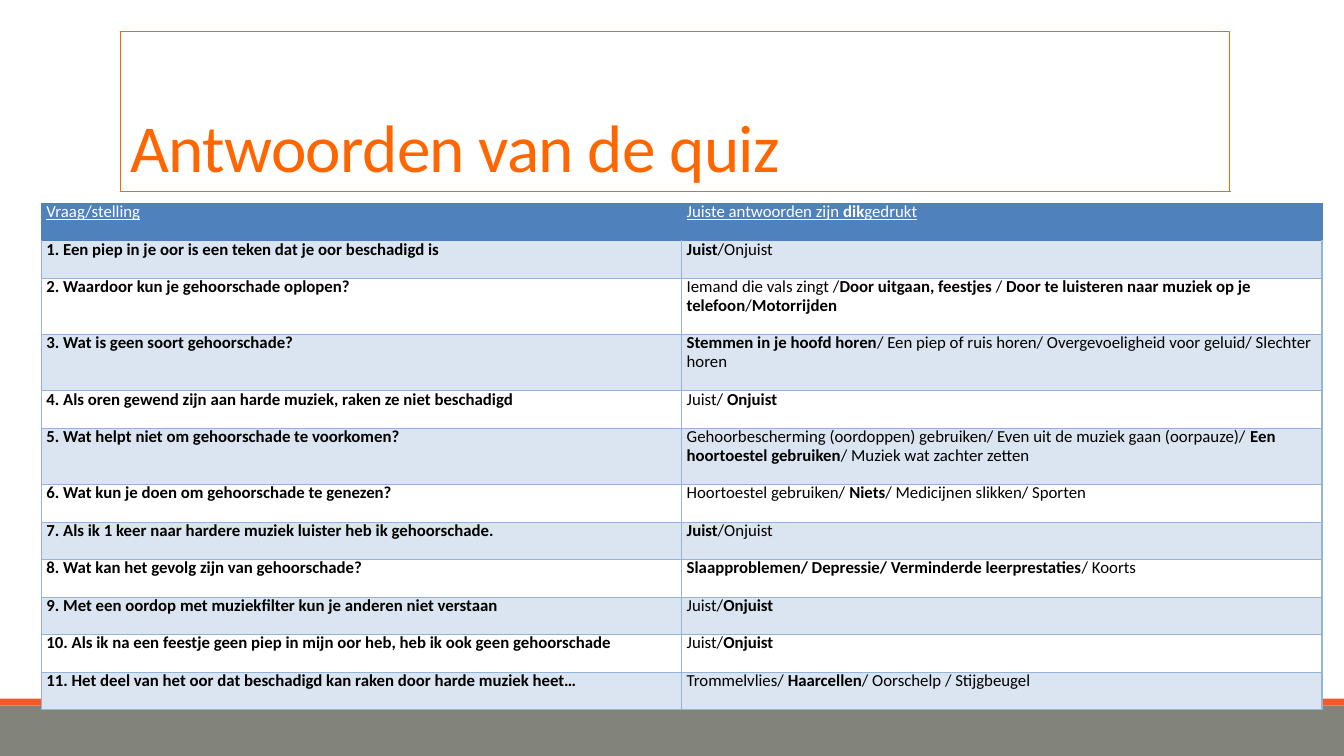
from lxml import etree
from pptx import Presentation
from pptx.dml.color import RGBColor
from pptx.enum.shapes import MSO_CONNECTOR, MSO_SHAPE
from pptx.enum.text import MSO_ANCHOR
from pptx.oxml.ns import qn
from pptx.util import Pt

RECTANGLE, STRAIGHT = MSO_SHAPE.RECTANGLE, MSO_CONNECTOR.STRAIGHT
BOTTOM, TOP = MSO_ANCHOR.BOTTOM, MSO_ANCHOR.TOP

# Content: text between ** marks is bold
TITLE = "Antwoorden van de quiz"
HEADER = ("Vraag/stelling", "Juiste antwoorden zijn **dik**gedrukt")
# Question, answers, number of lines the answers take
QUIZ = [
    ("1. Een piep in je oor is een teken dat je oor beschadigd is", "**Juist**/Onjuist", 1),
    ("2. Waardoor kun je gehoorschade oplopen?",
     "Iemand die vals zingt /**Door uitgaan, feestjes **/ "
     "**Door te luisteren naar muziek op je telefoon**/**Motorrijden**", 2),
    ("3. Wat is geen soort gehoorschade?",
     "**Stemmen in je hoofd horen**/ Een piep of ruis horen/ "
     "Overgevoeligheid voor geluid/ Slechter horen", 2),
    ("4. Als oren gewend zijn aan harde muziek, raken ze niet beschadigd",
     "Juist/ **Onjuist**", 1),
    ("5. Wat helpt niet om gehoorschade te voorkomen?",
     "Gehoorbescherming (oordoppen) gebruiken/ Even uit de muziek gaan (oorpauze)/ "
     "**Een hoortoestel gebruiken**/ Muziek wat zachter zetten", 2),
    ("6. Wat kun je doen om gehoorschade te genezen?",
     "Hoortoestel gebruiken/ **Niets**/ Medicijnen slikken/ Sporten", 1),
    ("7. Als ik 1 keer naar hardere muziek luister heb ik gehoorschade.",
     "**Juist**/Onjuist", 1),
    ("8. Wat kan het gevolg zijn van gehoorschade?",
     "**Slaapproblemen/ Depressie/ Verminderde leerprestaties**/ Koorts", 1),
    ("9. Met een oordop met muziekfilter kun je anderen niet verstaan",
     "Juist/**Onjuist**", 1),
    ("10. Als ik na een feestje geen piep in mijn oor heb, heb ik ook geen gehoorschade",
     "Juist/**Onjuist**", 1),
    ("11. Het deel van het oor dat beschadigd kan raken door harde muziek heet…",
     "Trommelvlies/ **Haarcellen**/ Oorschelp / Stijgbeugel", 1),
]

# Colours and measures in points
ORANGE, HEADER_BLUE, BAND_BLUE, GRID_BLUE = "FF6600", "4F81BD", "DBE5F1", "95B3D7"
SLIDE_W, SLIDE_H = 960, 540
FOOTER_TOP, STRIPE_H = 504, 5
TABLE_LEFT, TABLE_TOP, COLUMN_W = 29.5, 145.2, 457.4
LINE_H = 13.4


def colour(hex_code):
    return RGBColor.from_string(hex_code)


def write(frame, text, *, size, color, spacing, underline=None, tracking=None,
          anchor=TOP, margins=(7.2, 3.6)):
    """Fill a text frame or cell's frame; ** switches bold on and off."""
    frame.word_wrap = True
    frame.vertical_anchor = anchor
    frame.margin_left = frame.margin_right = Pt(margins[0])
    frame.margin_top = frame.margin_bottom = Pt(margins[1])
    paragraph = frame.paragraphs[0]
    paragraph.line_spacing = spacing
    for index, part in enumerate(text.split("**")):
        if not part:
            continue
        run = paragraph.add_run()
        run.text = part
        font = run.font
        font.name, font.size, font.underline = "Calibri", Pt(size), underline
        font.bold = index % 2 == 1
        font.color.rgb = colour(color)
        if tracking:
            font._element.set("spc", str(int(tracking * 100)))


def bar(top, height, fill):
    shape = slide.shapes.add_shape(RECTANGLE, 0, Pt(top), Pt(SLIDE_W), Pt(height))
    shape.shadow.inherit = False
    shape.fill.solid()
    shape.fill.fore_color.rgb = colour(fill)
    shape.line.fill.background()


def set_borders(cell, **edges):
    properties = cell._tc.get_or_add_tcPr()
    for index, (edge, color) in enumerate(edges.items()):
        line = etree.Element(qn(f"a:ln{edge}"), w=str(Pt(1)))
        fill = etree.SubElement(line, qn("a:solidFill"))
        etree.SubElement(fill, qn("a:srgbClr"), val=color)
        properties.insert(index, line)


prs = Presentation()
prs.slide_width, prs.slide_height = Pt(SLIDE_W), Pt(SLIDE_H)
slide = prs.slides.add_slide(prs.slide_layouts[6])

# Footer band, its stripe and the rule under the title
bar(FOOTER_TOP, SLIDE_H - FOOTER_TOP, "82847C")
bar(FOOTER_TOP - STRIPE_H, STRIPE_H, "F1592A")
rule = slide.shapes.add_connector(STRAIGHT, Pt(94.3), Pt(136.8), Pt(879.1), Pt(136.8))
rule.line.color.rgb = colour("808080")
rule.line.width = Pt(0.5)
etree.SubElement(rule._element.spPr, qn("a:effectLst"))

# Title
title = slide.shapes.add_textbox(Pt(86.2), Pt(22.3), Pt(792), Pt(114.5))
title.line.color.rgb = colour(ORANGE)
title.line.width = Pt(0.75)
write(title.text_frame, TITLE, size=48, color=ORANGE, spacing=0.85,
      tracking=-0.5, anchor=BOTTOM)

# Quiz table: each row leaves one line free below its text
rows = [(*HEADER, 1), *((f"**{question}**", answers, lines) for question, answers, lines in QUIZ)]
heights = [(lines + 1) * LINE_H for *_, lines in rows]
quiz_table = slide.shapes.add_table(
    len(rows), 2, Pt(TABLE_LEFT), Pt(TABLE_TOP), Pt(2 * COLUMN_W), Pt(sum(heights))).table
quiz_table.horz_banding = False
for column in quiz_table.columns:
    column.width = Pt(COLUMN_W)

for r, (question, answers, _) in enumerate(rows):
    quiz_table.rows[r].height = Pt(heights[r])
    is_header = r == 0
    for c, text in enumerate((question, answers)):
        cell = quiz_table.cell(r, c)
        cell.vertical_anchor = TOP
        cell.margin_left = cell.margin_right = Pt(3.6)
        cell.margin_top = cell.margin_bottom = 0
        write(cell.text_frame, text, size=12, color="FFFFFF" if is_header else "000000",
              spacing=Pt(LINE_H), underline=is_header, margins=(3.6, 0))
        if is_header or r % 2:
            cell.fill.solid()
            cell.fill.fore_color.rgb = colour(HEADER_BLUE if is_header else BAND_BLUE)
        else:
            cell.fill.background()
        side = HEADER_BLUE if is_header else GRID_BLUE
        set_borders(cell, L=side, R=side, T=HEADER_BLUE if r < 2 else GRID_BLUE, B=side)

prs.save("out.pptx")
